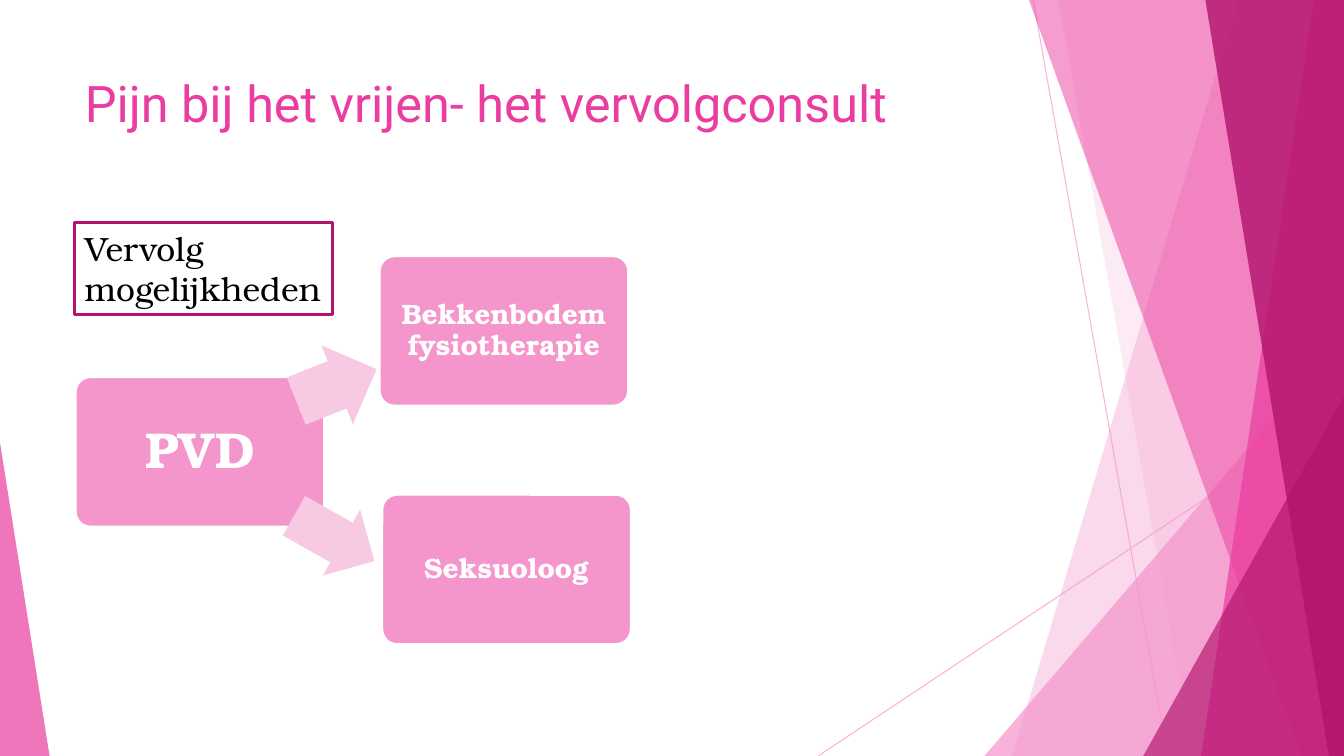
from lxml import etree
from pptx import Presentation
from pptx import util as u
from pptx.dml.color import RGBColor
from pptx.enum import shapes, text
from pptx.oxml import ns

COLS, ROWS = 16, 9
CELL = u.Inches(7.5) // ROWS

PINK = RGBColor(0xF4, 0x96, 0xCB)
PALE = RGBColor(0xF8, 0xC9, 0xE2)
MAGENTA = RGBColor(0xEB, 0x3D, 0x9F)
PLUM = RGBColor(0xB2, 0x13, 0x6D)
WHITE = RGBColor(0xFF, 0xFF, 0xFF)
BLACK = RGBColor(0, 0, 0)

HEADING_FONT, BODY_FONT = "Roboto", "TeX Gyre Bonum"
SHAPE = shapes.MSO_SHAPE
ALIGN, ANCHOR = text.PP_ALIGN, text.MSO_ANCHOR


def grid(*cells):
    return [round(c * CELL) for c in cells]


def set_alpha(fill_parent, percent):
    """Make the solid fill below the given XML element translucent."""
    color = fill_parent.find(".//" + ns.qn("a:srgbClr"))
    etree.SubElement(color, ns.qn("a:alpha")).set("val", str(percent * 1000))


def write(tf, words, size, color, font=BODY_FONT, bold=False,
          align=ALIGN.LEFT, anchor=ANCHOR.TOP, spacing=1.0, inset=None):
    tf.word_wrap = True
    tf.auto_size = text.MSO_AUTO_SIZE.NONE
    tf.vertical_anchor = anchor
    if inset is not None:
        tf.margin_left = tf.margin_right = u.Inches(inset)
        tf.margin_top = tf.margin_bottom = u.Inches(inset)
    p = tf.paragraphs[0]
    p.alignment, p.line_spacing = align, spacing
    r = p.add_run()
    r.text = words
    r.font.name, r.font.size, r.font.bold = font, u.Pt(size), bold
    r.font.color.rgb = color


class Deck:
    """Holds the slide and draws on its grid of 16 columns and 9 rows."""

    def __init__(self):
        self.prs = Presentation()
        self.prs.slide_width, self.prs.slide_height = grid(COLS, ROWS)
        self.s = self.prs.slides.add_slide(self.prs.slide_layouts[5])

    def style(self, sp, fill=None, alpha=100, line=None, width=1):
        sp.shadow.inherit = False
        if fill is None:
            sp.fill.background()
        else:
            sp.fill.solid()
            sp.fill.fore_color.rgb = fill
            if alpha < 100:
                set_alpha(sp.fill._xPr, alpha)
        if line is None:
            sp.line.fill.background()
        else:
            sp.line.color.rgb = line
            sp.line.width = u.Pt(width)
        return sp

    def title(self, words, *box):
        sp = self.s.shapes.title
        sp.left, sp.top, sp.width, sp.height = grid(*box)
        write(sp.text_frame, words, 36, MAGENTA, HEADING_FONT)

    def shape(self, kind, *box, adjust=(), rotation=0, **look):
        sp = self.s.shapes.add_shape(kind, *grid(*box))
        for i, value in enumerate(adjust):
            sp.adjustments[i] = value
        sp.rotation = rotation
        return self.style(sp, **look)

    def hairline(self, *ends):
        c = self.s.shapes.add_connector(shapes.MSO_CONNECTOR.STRAIGHT, *grid(*ends))
        c.line.color.rgb = PINK
        c.line.width = u.Pt(0.75)
        spPr = c._element.spPr
        set_alpha(spPr, 70)
        etree.SubElement(spPr, ns.qn("a:effectLst"))

    def band(self, top, bottom, fill, alpha):
        """Fill from a slanted left edge to the right side of the slide."""
        fb = self.s.shapes.build_freeform(*grid(top, 0))
        corners = [(COLS, 0), (COLS, ROWS), (bottom, ROWS)]
        fb.add_line_segments([grid(*c) for c in corners], close=True)
        self.style(fb.convert_to_shape(), fill, alpha)

    def wedge(self, left, top, width, apex, fill, alpha):
        """Triangle standing on the slide's bottom edge."""
        self.shape(SHAPE.ISOSCELES_TRIANGLE, left, top, width, ROWS - top,
                   adjust=[apex], fill=fill, alpha=alpha)

    def card(self, words, left, top, size=20):
        sp = self.shape(SHAPE.ROUNDED_RECTANGLE, left, top, 2.96, 1.78,
                        adjust=[0.1], fill=PINK, line=WHITE, width=1.5)
        write(sp.text_frame, words, size, WHITE, bold=True, align=ALIGN.CENTER,
              anchor=ANCHOR.MIDDLE, spacing=0.9, inset=0.09)

    def arrow(self, *box, rotation):
        self.shape(SHAPE.RIGHT_ARROW, *box, adjust=[0.6, 0.5],
                   rotation=rotation, fill=PALE)

    def label(self, words, *box):
        sp = self.shape(SHAPE.RECTANGLE, *box, line=PLUM, width=2.25)
        write(sp.text_frame, words, 24, BLACK)


def main():
    deck = Deck()

    deck.hairline(12.3, 0, 13.9, ROWS)
    deck.hairline(COLS, 4.84, 9.74, ROWS)
    deck.band(14.74, 12.05, PINK, 36)
    deck.band(12.6, 14.2, PINK, 20)
    deck.wedge(11.72, 4, 4.28, 1, PINK, 72)
    deck.band(12.25, 15.49, MAGENTA, 50)
    deck.band(15.64, 14.3, MAGENTA, 70)
    deck.band(14.35, 15.82, PLUM, 80)
    deck.wedge(13.61, 4.72, 2.39, 1, PLUM, 66)
    deck.wedge(0, 5.27, 0.59, 0, MAGENTA, 70)

    deck.title("Pijn bij het vrijen- het vervolgconsult", 0.89, 0.8, 11.28, 1.73)
    deck.card("PVD", 0.9, 4.49, size=36)
    deck.arrow(3.49, 4.08, 1.03, 1.01, rotation=338.3)
    deck.card("Bekkenbodem fysiotherapie", 4.52, 3.05)
    deck.arrow(3.43, 5.96, 1.1, 0.9, rotation=29.5)
    deck.card("Seksuoloog", 4.55, 5.89)
    deck.label("Vervolg mogelijkheden", 0.89, 2.65, 3.07, 1.09)

    deck.prs.save("out.pptx")


if __name__ == "__main__":
    main()
